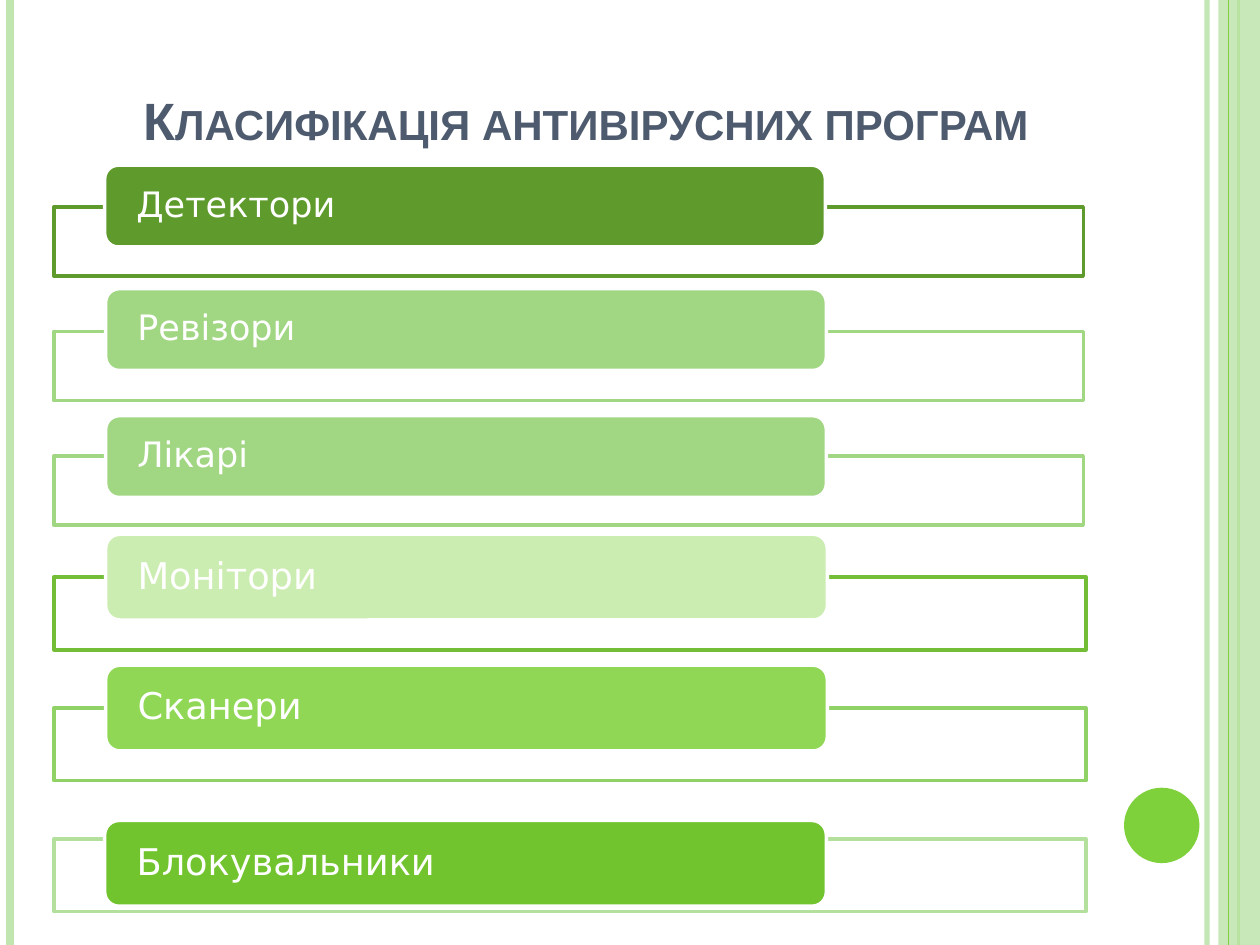
from lxml.etree import SubElement
from pptx import Presentation
from pptx.dml.color import RGBColor
from pptx.enum.shapes import MSO_CONNECTOR, MSO_SHAPE
from pptx.enum.text import MSO_ANCHOR, PP_ALIGN
from pptx.oxml.ns import qn
from pptx.util import Cm, Pt

COLORS = {
    "white": "FFFFFF",
    "title": "4E5B6F",
    "accent": "7FD13B",
    "pale": "C0E5AF",
}
SLIDE_WIDTH, SLIDE_HEIGHT = 25.4, 19.05


class SlideBuilder:
    """Holds the slide and the style of its elements."""

    heading_font = "Arial"
    body_font = "DejaVu Sans"

    def __init__(self, slide):
        self.slide = slide

    def set_opacity(self, fill, percent):
        color = fill._xPr.find(qn("a:solidFill"))[0]
        SubElement(color, qn("a:alpha"), val=str(percent * 1000))

    def vertical_line(self, x, color, width, opacity=100):
        line = self.slide.shapes.add_connector(
            MSO_CONNECTOR.STRAIGHT, Cm(x), Cm(0), Cm(x), Cm(SLIDE_HEIGHT))
        line.line.color.rgb = RGBColor.from_string(color)
        line.line.width = Pt(width)
        if opacity < 100:
            self.set_opacity(line.line.fill, opacity)
        SubElement(line._element.spPr, qn("a:effectLst"))

    def shape(self, kind, left, top, width, height, fill, opacity=100, outline=None):
        shape = self.slide.shapes.add_shape(
            kind, Cm(left), Cm(top), Cm(width), Cm(height))
        shape.shadow.inherit = False
        shape.fill.solid()
        shape.fill.fore_color.rgb = RGBColor.from_string(fill)
        if opacity < 100:
            self.set_opacity(shape.fill, opacity)
        if outline:
            shape.line.color.rgb = RGBColor.from_string(outline)
            shape.line.width = Pt(2)
        else:
            shape.line.fill.background()
        return shape

    def set_text(self, shape, text, font, size, color, align, anchor):
        frame = shape.text_frame
        frame.word_wrap = True
        frame.vertical_anchor = anchor
        paragraph = frame.paragraphs[0]
        paragraph.text = text
        paragraph.alignment = align
        paragraph.font.name = font
        paragraph.font.size = Pt(size)
        paragraph.font.color.rgb = RGBColor.from_string(color)
        return paragraph

    def title(self, text, left, top, width, height):
        box = self.slide.shapes.add_textbox(Cm(left), Cm(top), Cm(width), Cm(height))
        paragraph = self.set_text(box, text, self.heading_font, 30, COLORS["title"],
                                  PP_ALIGN.CENTER, MSO_ANCHOR.BOTTOM)
        paragraph.font.bold = True
        paragraph.runs[0].font._element.set("cap", "small")

    def frame(self, top, width, height, outline):
        self.shape(MSO_SHAPE.RECTANGLE, 1.09, top, width, height,
                   COLORS["white"], 90, outline)

    def label(self, text, left, top, width, height, fill, size):
        bar = self.shape(MSO_SHAPE.ROUNDED_RECTANGLE, left, top, width, height,
                         fill, outline=COLORS["white"])
        paragraph = self.set_text(bar, text, self.body_font, size, COLORS["white"],
                                  PP_ALIGN.LEFT, MSO_ANCHOR.MIDDLE)
        paragraph.line_spacing = 0.9
        frame = bar.text_frame
        frame.margin_left = frame.margin_right = Cm(0.56)
        frame.margin_top = frame.margin_bottom = Cm(0)


def main():
    presentation = Presentation()
    presentation.slide_width = Cm(SLIDE_WIDTH)
    presentation.slide_height = Cm(SLIDE_HEIGHT)
    builder = SlideBuilder(presentation.slides.add_slide(presentation.slide_layouts[6]))

    # Side decoration
    builder.vertical_line(24.33, COLORS["pale"], 3, 93)
    builder.vertical_line(0.2, COLORS["pale"], 4.5)
    builder.vertical_line(24.97, COLORS["accent"], 1.5)
    builder.shape(MSO_SHAPE.RECTANGLE, 24.56, 0, 0.84, SLIDE_HEIGHT, COLORS["pale"], 87)
    builder.vertical_line(24.77, COLORS["accent"], 0.75)
    builder.shape(MSO_SHAPE.OVAL, 22.66, 15.88, 1.52, 1.52, COLORS["accent"])

    builder.title("Класифікація антивірусних програм", 1.5, 0, 20.62, 3.18)

    # Two groups: first frame top, step, frame size, label size, font size,
    # then rows of text, label left, label top, label fill, frame outline
    groups = [
        (4.17, 2.51, (20.75, 1.4), (14.53, 1.65), 20, [
            ("Детектори", 2.11, 3.33, "5E9B2C", "5E9B2C"),
            ("Ревізори", 2.13, 5.82, "A1D683", "A1D683"),
            ("Лікарі", 2.13, 8.38, "A1D683", "A1D683"),
        ]),
        (11.63, 2.64, (20.8, 1.47), (14.55, 1.73), 21, [
            ("Монітори", 2.13, 10.77, "CCEDB1", "73BE36"),
            ("Сканери", 2.13, 13.41, "90D755", "91D267"),
            ("Блокувальники", 2.11, 16.54, "72C42E", "B4E09D"),
        ]),
    ]
    for first_top, step, frame_size, label_size, font_size, rows in groups:
        for index, (text, left, top, fill, outline) in enumerate(rows):
            builder.frame(first_top + index * step, *frame_size, outline)
            builder.label(text, left, top, *label_size, fill, font_size)

    presentation.save("out.pptx")


if __name__ == "__main__":
    main()
